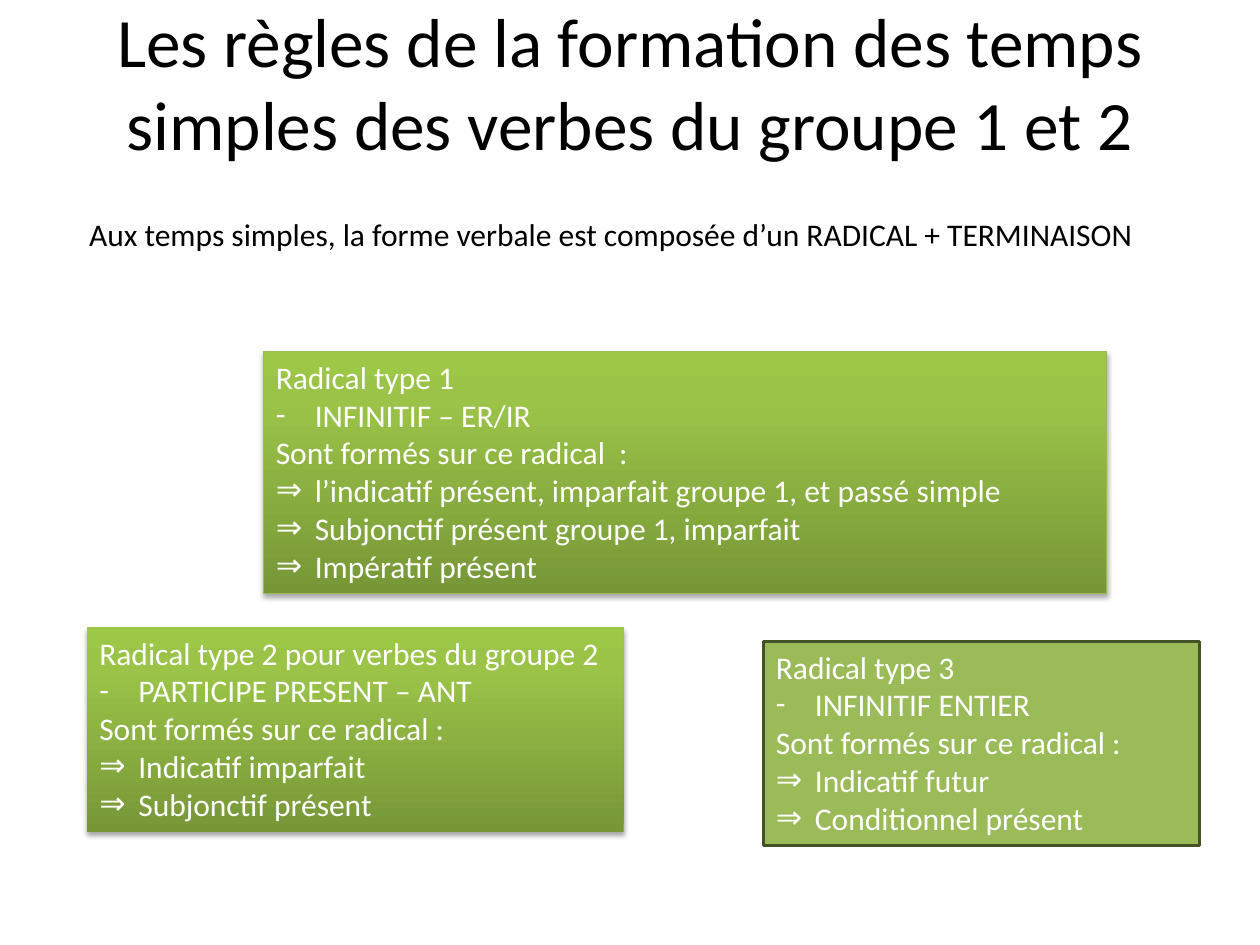
from copy import deepcopy

from lxml.etree import SubElement
from pptx import Presentation
from pptx.dml.color import RGBColor
from pptx.enum.shapes import MSO_SHAPE
from pptx.enum.text import MSO_ANCHOR, PP_ALIGN
from pptx.oxml.ns import qn
from pptx.util import Inches, Pt

COLORS = {
    "text": "000000", "box_text": "FFFFFF", "box_fill": "9BBB59",
    "dark_line": "445227", "light_line": "98B955", "shadow": "000000",
}
GRADIENT = [(0, "779737"), (0.8, "9BC348"), (1, "9DC746")]
BULLETS = ("-", "⇒")


def write_text(frame, lines, size, color, align, anchor):
    frame.word_wrap = True
    frame.vertical_anchor = anchor
    for i, line in enumerate(lines):
        paragraph = frame.paragraphs[0] if i == 0 else frame.add_paragraph()
        paragraph.alignment = align
        bullet = line[0] if line[0] in BULLETS else None
        run = paragraph.add_run()
        run.text = line[2:] if bullet else line
        for name, value in {"name": "Calibri", "size": Pt(size)}.items():
            setattr(run.font, name, value)
        run.font.color.rgb = RGBColor.from_string(COLORS[color])
        if bullet:
            properties = paragraph._p.get_or_add_pPr()
            properties.set("marL", str(Inches(0.31)))
            properties.set("indent", str(-Inches(0.31)))
            SubElement(properties, qn("a:buFont"), typeface="Calibri")
            SubElement(properties, qn("a:buChar"), char=bullet)


def add_gradient_and_shadow(box):
    box.fill.gradient()
    box.fill.gradient_angle = 90
    stops = box._element.spPr.find(".//" + qn("a:gsLst"))
    stops.append(deepcopy(stops[-1]))
    for stop, (position, color) in zip(box.fill.gradient_stops, GRADIENT):
        stop.position = position
        stop.color.rgb = RGBColor.from_string(color)
    effects = box._element.spPr.find(qn("a:effectLst"))
    shadow = SubElement(effects, qn("a:outerShdw"), blurRad=str(Pt(3.1)),
                        dist=str(Pt(1.8)), dir="5400000", rotWithShape="0")
    shade = SubElement(shadow, qn("a:srgbClr"), val=COLORS["shadow"])
    SubElement(shade, qn("a:alpha"), val="35000")


prs = Presentation()
prs.slide_width, prs.slide_height = Inches(10), Inches(7.5)
slide = prs.slides.add_slide(prs.slide_layouts[6])

# Title and introduction
headings = [
    ((0.5, 0.3, 9, 0.69), 39.6, MSO_ANCHOR.MIDDLE,
     "Les règles de la formation des temps simples des verbes du groupe 1 et 2"),
    ((0.35, 1.66, 9, 0.47), 18, MSO_ANCHOR.TOP,
     "Aux temps simples, la forme verbale est composée d’un RADICAL + TERMINAISON"),
]
for place, size, anchor, text in headings:
    heading = slide.shapes.add_textbox(*map(Inches, place))
    write_text(heading.text_frame, [text], size, "text", PP_ALIGN.CENTER, anchor)
heading.text_frame.paragraphs[0].space_before = Pt(3.6)

# The three stems: place, gradient, outline, lines
stems = [
    ((2.09, 2.79, 6.69, 1.92), True, ("light_line", 0.75), [
        "Radical type 1",
        "- INFINITIF – ER/IR",
        "Sont formés sur ce radical  :",
        "⇒ l’indicatif présent, imparfait groupe 1, et passé simple",
        "⇒ Subjonctif présent groupe 1, imparfait",
        "⇒ Impératif présent",
    ]),
    ((0.69, 4.98, 4.26, 1.62), True, None, [
        "Radical type 2 pour verbes du groupe 2",
        "- PARTICIPE PRESENT – ANT",
        "Sont formés sur ce radical :",
        "⇒ Indicatif imparfait",
        "⇒ Subjonctif présent",
    ]),
    ((6.06, 5.09, 3.46, 1.62), False, ("dark_line", 2), [
        "Radical type 3",
        "- INFINITIF ENTIER",
        "Sont formés sur ce radical :",
        "⇒ Indicatif futur",
        "⇒ Conditionnel présent",
    ]),
]
for place, has_gradient, outline, lines in stems:
    stem = slide.shapes.add_shape(MSO_SHAPE.RECTANGLE, *map(Inches, place))
    stem.shadow.inherit = False
    if has_gradient:
        add_gradient_and_shadow(stem)
    else:
        stem.fill.solid()
        stem.fill.fore_color.rgb = RGBColor.from_string(COLORS["box_fill"])
    if outline:
        color, width = outline
        stem.line.color.rgb = RGBColor.from_string(COLORS[color])
        stem.line.width = Pt(width)
    else:
        stem.line.fill.background()
    write_text(stem.text_frame, lines, 18, "box_text", PP_ALIGN.LEFT, MSO_ANCHOR.TOP)

prs.save("out.pptx")
